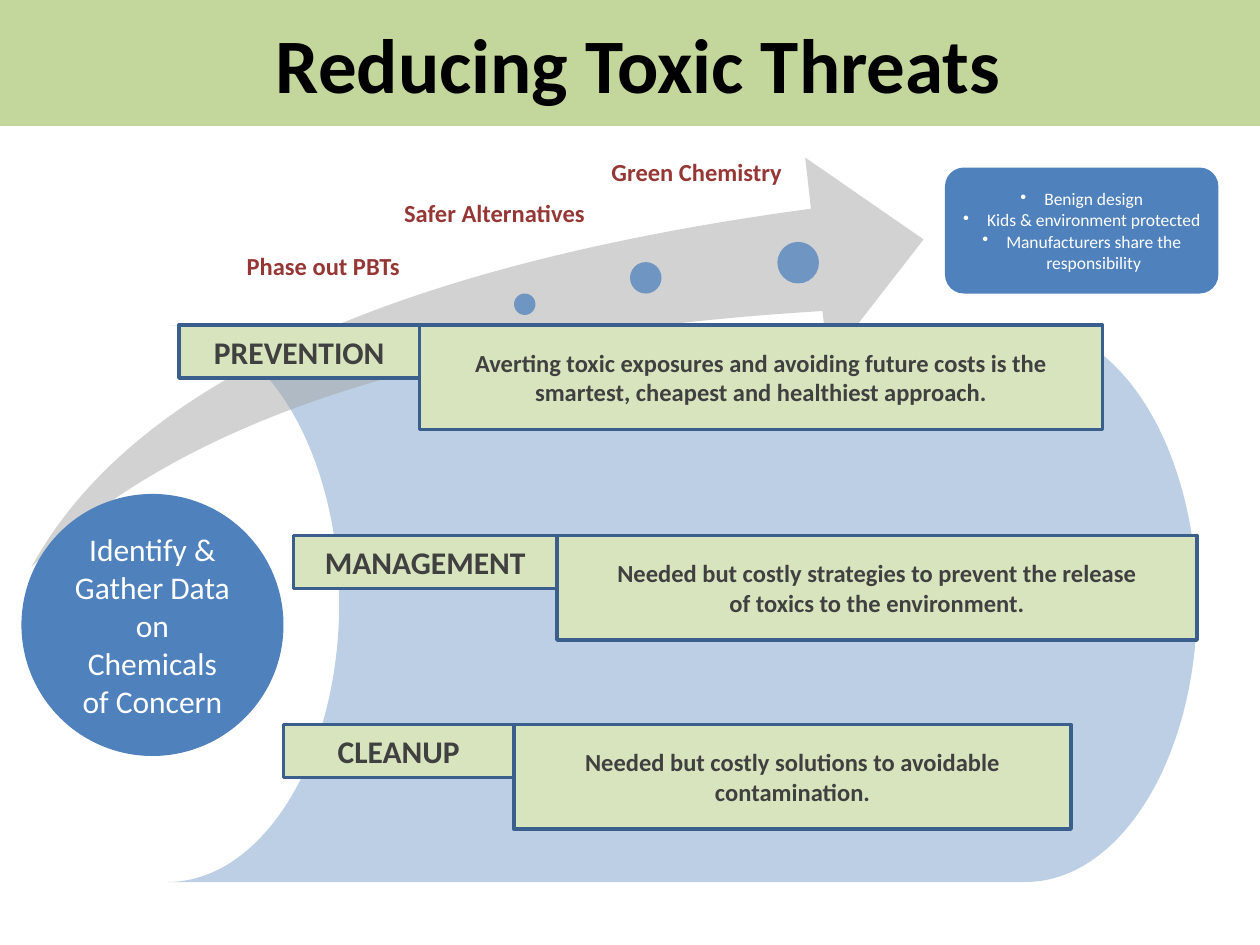
import pptx
import pptx.dml.color
import pptx.enum.shapes
import pptx.enum.text
import pptx.oxml
import pptx.oxml.ns
import pptx.util
from pptx.util import Inches

SHAPE = pptx.enum.shapes.MSO_SHAPE
CENTER = pptx.enum.text.PP_ALIGN.CENTER
MIDDLE = pptx.enum.text.MSO_ANCHOR.MIDDLE

FONT = "Calibri"
BLUE, PALE_BLUE, OUTLINE = "4F81BD", "95B3D7", "3A5F8C"
GREEN, PALE_GREEN = "C3D69B", "D7E4BD"
BLACK, WHITE, GREY, DARK_GREY, RED = "000000", "FFFFFF", "A6A6A6", "404040", "953735"


def color(value):
    return pptx.dml.color.RGBColor.from_string(value)


def set_fill(shape, value, opacity=100):
    shape.fill.solid()
    shape.fill.fore_color.rgb = color(value)
    if opacity < 100:
        color_element = shape.fill._xPr.find(".//" + pptx.oxml.ns.qn("a:srgbClr"))
        alpha = pptx.oxml.parse_xml(
            f'<a:alpha {pptx.oxml.ns.nsdecls("a")} val="{opacity * 1000}"/>')
        color_element.append(alpha)


def write_text(shape, lines, size, text_color, bold=False):
    frame = shape.text_frame
    frame.word_wrap = True
    frame.vertical_anchor = MIDDLE
    for index, line in enumerate(lines):
        paragraph = frame.add_paragraph() if index else frame.paragraphs[0]
        paragraph.alignment = CENTER
        run = paragraph.add_run()
        run.text = line
        run.font.name = FONT
        run.font.size = pptx.util.Pt(size)
        run.font.bold = bold
        run.font.color.rgb = color(text_color)


def add_bullets(shape, indent):
    for paragraph in shape.text_frame.paragraphs:
        properties = paragraph._p.get_or_add_pPr()
        properties.set("marL", str(Inches(indent)))
        properties.set("indent", str(-Inches(indent)))
        properties.append(pptx.oxml.parse_xml(
            f'<a:buChar {pptx.oxml.ns.nsdecls("a")} char="•"/>'))


def add_filled_shape(slide, kind, left, top, width, height, fill, opacity=100):
    shape = slide.shapes.add_shape(
        kind, Inches(left), Inches(top), Inches(width), Inches(height))
    shape.shadow.inherit = False
    set_fill(shape, fill, opacity)
    shape.line.fill.background()
    return shape


def add_title(slide, text):
    title = slide.shapes.title
    title.left, title.top = Inches(0), Inches(0)
    title.width, title.height = Inches(10), Inches(1)
    set_fill(title, GREEN)
    write_text(title, [text], 44, BLACK, bold=True)


def add_box(slide, left, top, width, height, lines, size):
    box = add_filled_shape(slide, SHAPE.RECTANGLE, left, top, width, height, PALE_GREEN)
    box.line.color.rgb = color(OUTLINE)
    box.line.width = pptx.util.Pt(2)
    write_text(box, lines, size, DARK_GREY, bold=True)


def add_strategy(slide, left, top, split, right, name, lines):
    """Name box with its explanation box starting at split."""
    add_box(slide, left, top, split - left, 0.42, [name], 18)
    add_box(slide, split, top, right - split, 0.83, lines, 14)


def add_step(slide, left, top, width, text):
    label = slide.shapes.add_textbox(
        Inches(left), Inches(top), Inches(width), Inches(0.25))
    frame = label.text_frame
    frame.margin_left = Inches(0.18)
    frame.margin_top = frame.margin_right = frame.margin_bottom = 0
    write_text(label, [text], 14, RED, bold=True)
    frame.paragraphs[0].line_spacing = 0.9


def main():
    presentation = pptx.Presentation()
    presentation.slide_width, presentation.slide_height = Inches(10), Inches(7.5)
    slide = presentation.slides.add_slide(presentation.slide_layouts[5])
    add_title(slide, " Reducing Toxic Threats")

    # Background drum and rising arrow
    drum = add_filled_shape(slide, SHAPE.FLOWCHART_STORED_DATA,
                            1.33, 2.58, 8.17, 4.42, PALE_BLUE, 63)
    drum.rotation = 180
    arrow = add_filled_shape(slide, SHAPE.SWOOSH_ARROW, 0.25, 1.25, 7.08, 3.25, GREY, 50)
    arrow.adjustments[0] = 0.25
    arrow.adjustments[1] = 0.275

    # Starting point and outcome
    start = add_filled_shape(slide, SHAPE.OVAL, 0.17, 3.92, 2.08, 2.08, BLUE)
    write_text(start, ["Identify & Gather Data on Chemicals of Concern"], 18, WHITE)
    outcome = add_filled_shape(slide, SHAPE.ROUNDED_RECTANGLE, 7.5, 1.33, 2.17, 1, BLUE)
    outcome.adjustments[0] = 0.15
    write_text(outcome, ["Benign design", "Kids & environment protected",
                         "Manufacturers share the responsibility"], 10, WHITE)
    add_bullets(outcome, 0.19)

    # Steps along the arrow
    for left, top, diameter in ((4.08, 2.33, 0.17), (5, 2.08, 0.25), (6.17, 1.92, 0.33)):
        add_filled_shape(slide, SHAPE.OVAL, left, top, diameter, diameter, BLUE, 75)
    add_step(slide, 1.45, 2, 2.05, "Phase out PBTs")
    add_step(slide, 2.75, 1.58, 2.17, "Safer Alternatives")
    add_step(slide, 4.5, 1.25, 1.88, "Green Chemistry")

    # Strategies
    add_strategy(slide, 1.42, 2.58, 3.33, 8.75, "PREVENTION",
                 ["Averting toxic exposures and avoiding future costs is the "
                  "smartest, cheapest and healthiest approach."])
    add_strategy(slide, 2.33, 4.25, 4.42, 9.5, "MANAGEMENT",
                 ["Needed but costly strategies to prevent the release",
                  "of toxics to the environment."])
    add_strategy(slide, 2.25, 5.75, 4.08, 8.5, "CLEANUP",
                 ["Needed but costly solutions to avoidable contamination."])

    presentation.save("out.pptx")


if __name__ == "__main__":
    main()
